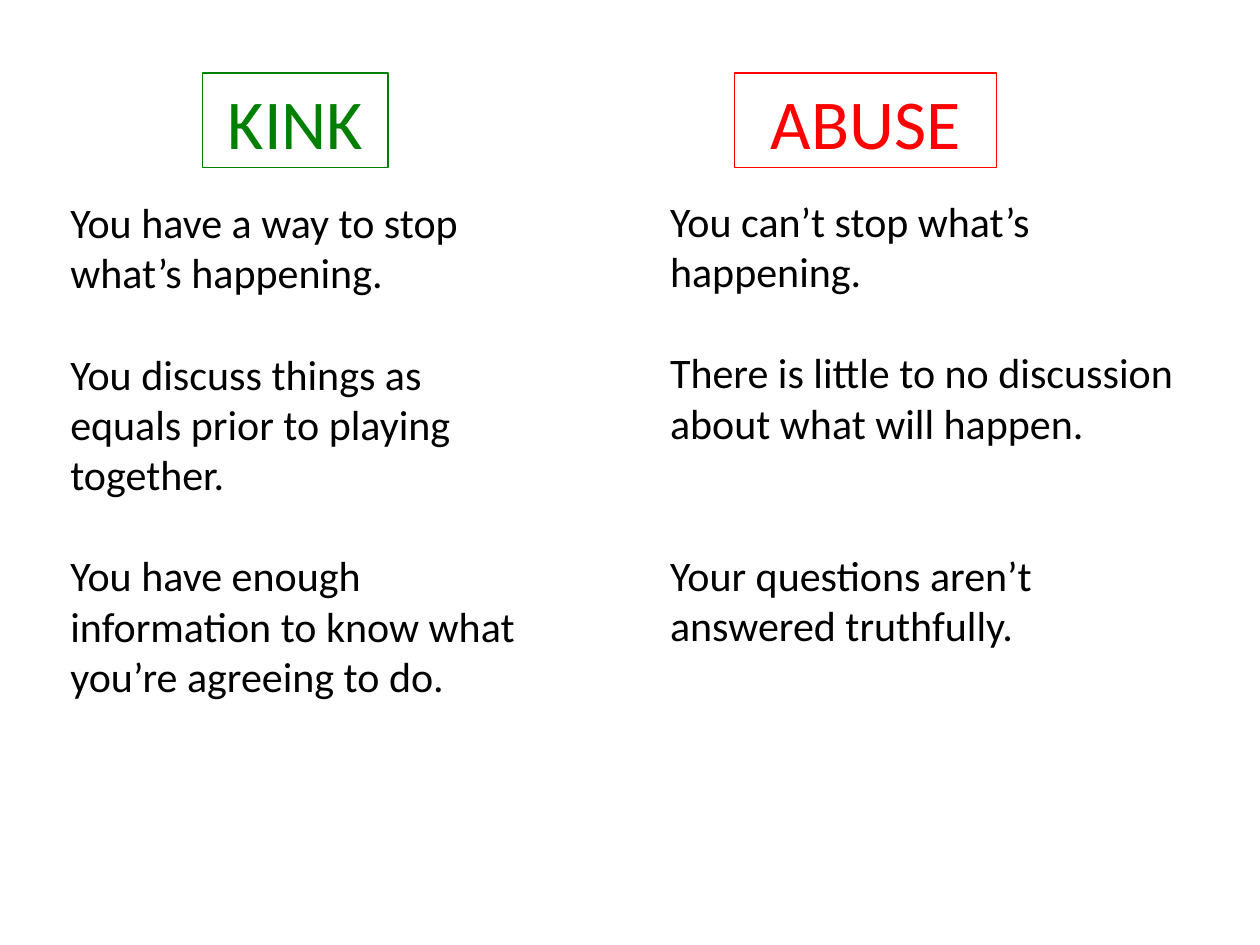
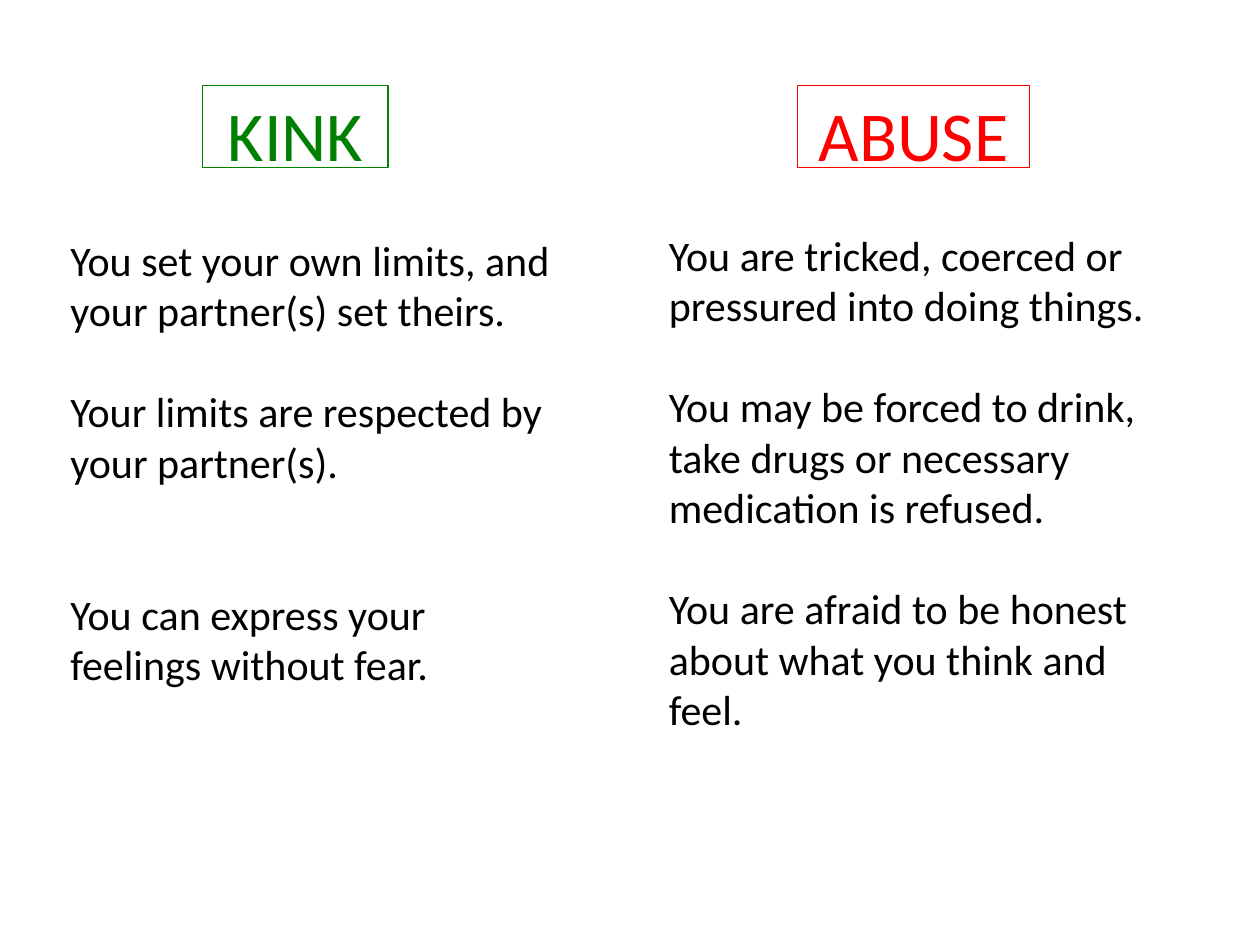
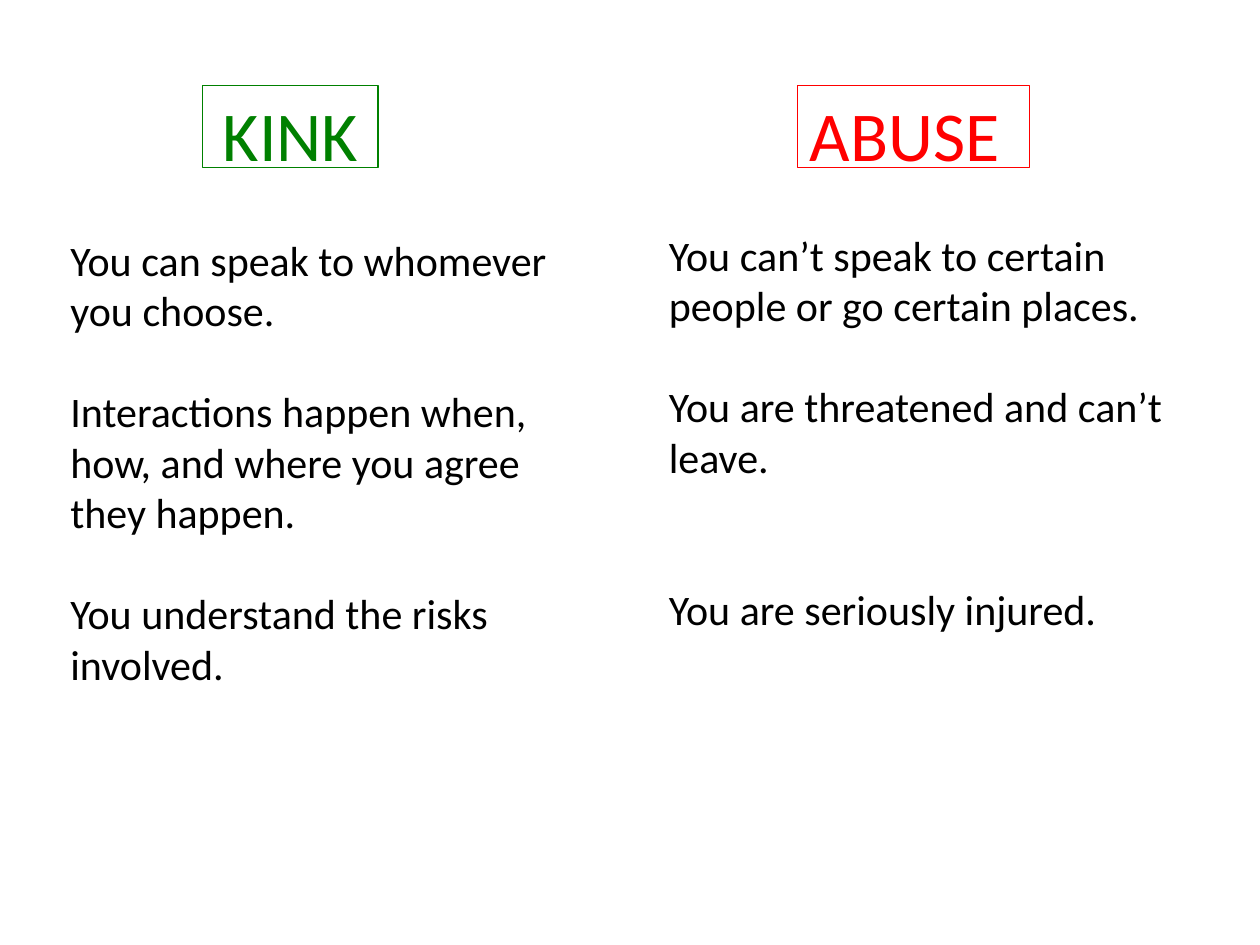
from dataclasses import dataclass

from pptx import Presentation
from pptx import util as u
from pptx.dml.color import RGBColor
from pptx.enum import shapes, text

PX = 9144  # EMU per px, 100 px to the inch


@dataclass(frozen=True)
class Theme:
    font: str = "Calibri"
    heading_size: int = 40
    body_size: int = 24
    blank_line: int = 29
    border: float = 0.75
    kink: str = "008000"
    abuse: str = "FF0000"
    body: str = "000000"


theme = Theme()
CENTER, LEFT = text.PP_ALIGN.CENTER, text.PP_ALIGN.LEFT


def px(*lengths):
    return [length * PX for length in lengths]


def style(paragraph, size, color):
    font = paragraph.font
    font.name, font.size = theme.font, u.Pt(size)
    font.color.rgb = RGBColor.from_string(color)


# Each slide: headings as (label, colour, box, alignment), then columns as
# (box, statements), where a statement is (blank lines before it, wording)
comparisons = [
    (
        [("ABUSE", theme.abuse, (583, 58, 208, 75), CENTER),
         ("KINK", theme.kink, (161, 58, 147, 75), CENTER)],
        [((522, 150, 420, 470), [
            (0, "You can’t stop what’s happening."),
            (1, "There is little to no discussion about what will happen."),
            (2, "Your questions aren’t answered truthfully.")]),
         ((46, 151, 410, 451), [
             (0, "You have a way to stop what’s happening."),
             (1, "You discuss things as"),
             (0, "equals prior to playing together."),
             (1, "You have enough information to know what you’re agreeing to do.")])],
    ),
    (
        [("ABUSE", theme.abuse, (633, 68, 184, 65), CENTER),
         ("KINK", theme.kink, (161, 68, 147, 65), CENTER)],
        [((521, 177, 420, 424), [
            (0, "You are tricked, coerced or pressured into doing things."),
            (1, "You may be forced to drink, take drugs or necessary medication is refused."),
            (1, "You are afraid to be honest about what you think and feel.")]),
         ((46, 181, 410, 446), [
             (0, "You set your own limits, and your partner(s) set theirs."),
             (1, "Your limits are respected by your partner(s)."),
             (2, "You can express your feelings without fear.")])],
    ),
    (
        [("ABUSE", theme.abuse, (633, 68, 184, 65), LEFT),
         ("KINK", theme.kink, (161, 68, 139, 65), CENTER)],
        [((521, 177, 420, 424), [
            (0, "You can’t speak to certain people or go certain places."),
            (1, "You are threatened and can’t leave."),
            (2, "You are seriously injured.")]),
         ((46, 181, 410, 446), [
             (0, "You can speak to whomever you choose."),
             (1, "Interactions happen when, how, and where you agree they happen."),
             (1, "You understand the risks involved.")])],
    ),
]

deck = Presentation()
deck.slide_width, deck.slide_height = px(1000, 750)

for headings, columns in comparisons:
    slide = deck.slides.add_slide(deck.slide_layouts[6])

    # Framed headings
    for label, color, box, alignment in headings:
        heading = slide.shapes.add_shape(shapes.MSO_SHAPE.RECTANGLE, *px(*box))
        heading.shadow.inherit = False
        heading.fill.background()
        heading.line.color.rgb = RGBColor.from_string(color)
        heading.line.width = u.Pt(theme.border)
        heading.text_frame.vertical_anchor = text.MSO_ANCHOR.TOP
        title = heading.text_frame.paragraphs[0]
        title.text, title.alignment = label, alignment
        style(title, theme.heading_size, color)

    # Columns of statements
    for box, statements in columns:
        frame = slide.shapes.add_textbox(*px(*box)).text_frame
        frame.word_wrap = True
        for index, (blank_lines, wording) in enumerate(statements):
            statement = frame.add_paragraph() if index else frame.paragraphs[0]
            statement.text = wording
            statement.space_before = u.Pt(blank_lines * theme.blank_line)
            style(statement, theme.body_size, theme.body)

deck.save("out.pptx")
